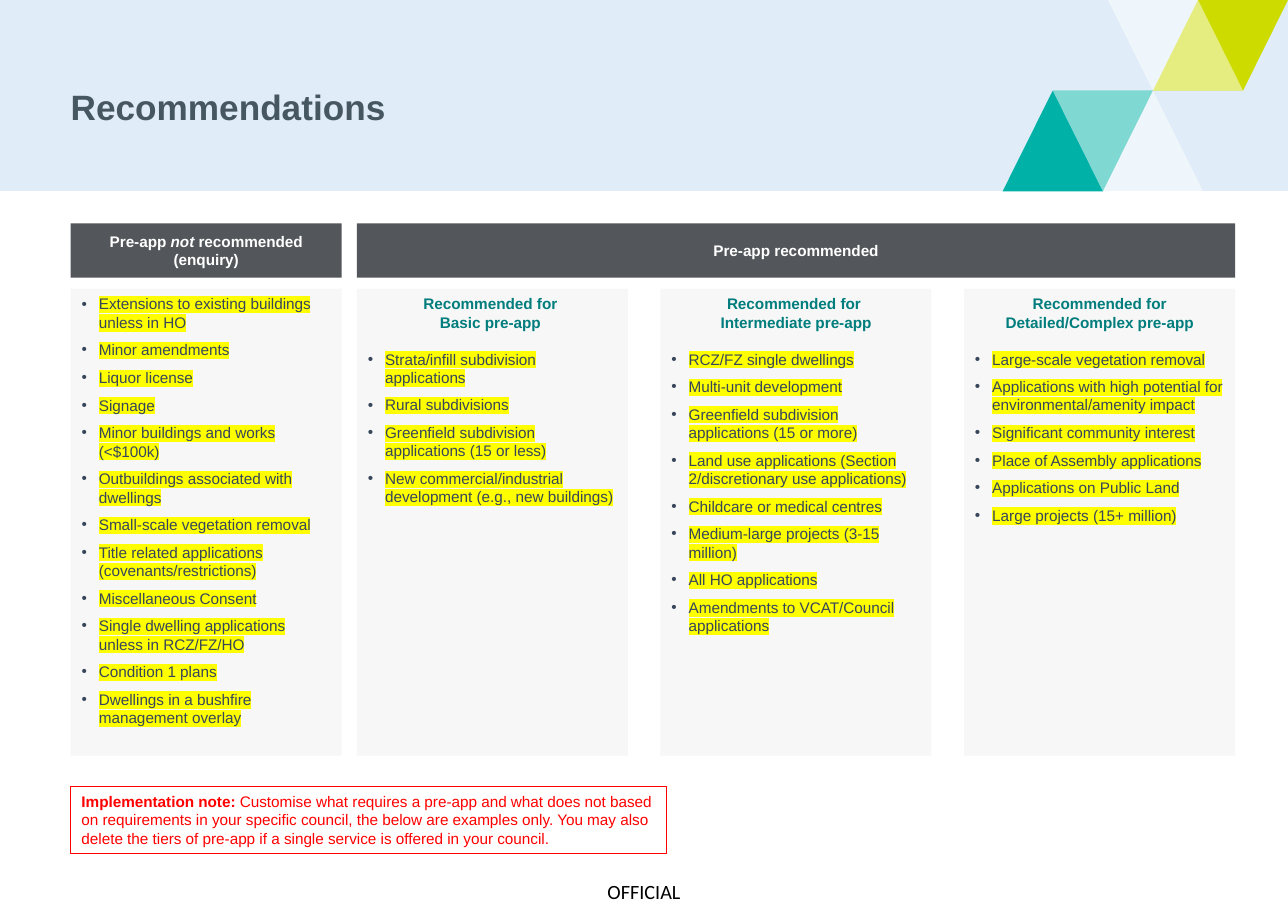
from lxml.etree import SubElement
from pptx import Presentation
from pptx.dml.color import RGBColor
from pptx.enum.shapes import MSO_SHAPE
from pptx.enum.text import MSO_ANCHOR, MSO_AUTO_SIZE, PP_ALIGN
from pptx.oxml.ns import qn
from pptx.util import Cm, Pt

COLOURS = {
    "band": "E0EDF8", "teal": "00B1A8", "lime": "CDDB00", "white": "FFFFFF",
    "title": "465762", "header": "53565A", "panel": "F2F2F2", "tier": "017D7D",
    "body": "37465B", "highlight": "FFFF00", "note": "FF0000", "black": "000000",
}

LEFT, COLUMN_WIDTH, PITCH = 1.63, 6.25, 7.0
TIERS_LEFT = 8.23
HEADER_TOP, HEADER_HEIGHT = 5.15, 1.25
PANEL_TOP, PANEL_HEIGHT = 6.66, 10.76
BAND_HEIGHT, BAND_MIDDLE = 4.41, 2.09

# Tier heading (None for the enquiry column) and its bullets
COLUMNS = [
    (None, [
        "Extensions to existing buildings unless in HO", "Minor amendments",
        "Liquor license", "Signage", "Minor buildings and works (<$100k)",
        "Outbuildings associated with dwellings", "Small-scale vegetation removal",
        "Title related applications (covenants/restrictions)",
        "Miscellaneous Consent", "Single dwelling applications unless in RCZ/FZ/HO",
        "Condition 1 plans", "Dwellings in a bushfire management overlay"]),
    ("Recommended for \nBasic pre-app ", [
        "Strata/infill subdivision applications", "Rural subdivisions",
        "Greenfield subdivision applications (15 or less)",
        "New commercial/industrial development (e.g., new buildings)"]),
    ("Recommended for \nIntermediate pre-app", [
        "RCZ/FZ single dwellings", "Multi-unit development",
        "Greenfield subdivision applications (15 or more)",
        "Land use applications (Section 2/discretionary use applications)",
        "Childcare or medical centres", "Medium-large projects (3-15 million)",
        "All HO applications", "Amendments to VCAT/Council applications"]),
    ("Recommended for Detailed/Complex pre-app", [
        "Large-scale vegetation removal",
        "Applications with high potential for environmental/amenity impact",
        "Significant community interest", "Place of Assembly applications",
        "Applications on Public Land", "Large projects (15+ million)"]),
]


def colour(name):
    return RGBColor.from_string(COLOURS[name])


def paint(shape, name, opacity=100):
    shape.shadow.inherit = False
    shape.line.fill.background()
    shape.fill.solid()
    shape.fill.fore_color.rgb = colour(name)
    if opacity < 100:
        tint = shape.element.xpath("./p:spPr/a:solidFill/a:srgbClr")[0]
        SubElement(tint, qn("a:alpha"), val=str(opacity * 1000))


def place(shape, left, top, width, height):
    shape.left, shape.top = Cm(left), Cm(top)
    shape.width, shape.height = Cm(width), Cm(height)


def set_font(para, size, name, bold=False, face="Arial"):
    font = para.font
    font.size, font.name, font.bold = Pt(size), face, bold
    font.color.rgb = colour(name)


def set_frame(frame, anchor, side=0.25, edge=0.13):
    frame.word_wrap = True
    frame.auto_size = MSO_AUTO_SIZE.NONE
    frame.vertical_anchor = anchor
    frame.margin_left = frame.margin_right = Cm(side)
    frame.margin_top = frame.margin_bottom = Cm(edge)


def add_polygon(page, points, name, opacity=100):
    corners = [(Cm(x), Cm(y)) for x, y in points]
    builder = page.shapes.build_freeform(*corners[0], scale=1.0)
    builder.add_line_segments(corners[1:], close=True)
    paint(builder.convert_to_shape(), name, opacity)


def add_slants(page, left, step, flat, tip, name):
    """A coloured parallelogram, half covered by a pale one leaning the other way."""
    x = [left + step * i for i in range(5)]
    if tip < flat:
        solid = [(x[1], tip), (x[0], flat), (x[2], flat), (x[3], tip)]
        pale = [(x[1], tip), (x[2], flat), (x[4], flat), (x[3], tip)]
    else:
        solid = [(x[3], tip), (x[4], flat), (x[2], flat), (x[1], tip)]
        pale = [(x[3], tip), (x[2], flat), (x[0], flat), (x[1], tip)]
    add_polygon(page, solid, name)
    add_polygon(page, pale, "white", 50)


def add_banner(page, width, height):
    add_polygon(page, [(0, 0), (width, 0), (width, height), (0, height)], "band")
    add_slants(page, 23.12, 1.155, height, BAND_MIDDLE, "teal")
    add_slants(page, 25.55, 1.0375, 0, BAND_MIDDLE, "lime")
    # Title, brought in front of the band
    title = page.shapes.title
    title.element.getparent().append(title.element)
    place(title, LEFT, 1.83, 18.97, 1.25)
    set_frame(title.text_frame, MSO_ANCHOR.TOP, side=0)
    para = title.text_frame.paragraphs[0]
    para.text = "Recommendations"
    para.alignment = PP_ALIGN.LEFT
    set_font(para, 23, "title", True)


def add_header(page, left, width, spans, side=0.25):
    header = page.shapes.add_shape(MSO_SHAPE.RECTANGLE, 0, 0, 0, 0)
    place(header, left, HEADER_TOP, width, HEADER_HEIGHT)
    paint(header, "header")
    set_frame(header.text_frame, MSO_ANCHOR.MIDDLE, side)
    para = header.text_frame.paragraphs[0]
    para.alignment = PP_ALIGN.CENTER
    for text, italic in spans:
        span = para.add_run()
        span.text = text
        span.font.italic = italic
    set_font(para, 10, "white", True)


def fill_column(panel, left, heading, items):
    place(panel, left, PANEL_TOP, COLUMN_WIDTH, PANEL_HEIGHT)
    paint(panel, "panel", 60)
    frame = panel.text_frame
    set_frame(frame, MSO_ANCHOR.TOP)
    lines = ([heading] if heading else []) + items
    for index, text in enumerate(lines):
        para = frame.paragraphs[0] if index == 0 else frame.add_paragraph()
        para.text = text
        is_heading = text == heading
        properties = para._p.get_or_add_pPr()
        indent = 0 if is_heading else Cm(0.4)
        properties.set("marL", str(indent))
        properties.set("indent", str(-indent))
        if is_heading:
            SubElement(properties, qn("a:buNone"))
        else:
            SubElement(properties, qn("a:buChar"), char="•")
            marker = SubElement(para.runs[0].font._element, qn("a:highlight"))
            SubElement(marker, qn("a:srgbClr"), val=COLOURS["highlight"])
        para.alignment = PP_ALIGN.CENTER if is_heading else PP_ALIGN.LEFT
        para.space_before = Pt(0)
        para.space_after = Pt(12 if is_heading else 6)
        set_font(para, 10, "tier" if is_heading else "body", is_heading)


def add_note(page, left, top, width, height):
    note = page.shapes.add_shape(MSO_SHAPE.RECTANGLE, 0, 0, 0, 0)
    place(note, left, top, width, height)
    note.shadow.inherit = False
    note.fill.background()
    note.line.color.rgb = colour("note")
    note.line.width = Pt(0.75)
    set_frame(note.text_frame, MSO_ANCHOR.TOP)
    para = note.text_frame.paragraphs[0]
    para.alignment = PP_ALIGN.LEFT
    lead = para.add_run()
    lead.text = "Implementation note: "
    lead.font.bold = True
    para.add_run().text = (
        "Customise what requires a pre-app and what does not based on requirements "
        "in your specific council, the below are examples only. You may also delete "
        "the tiers of pre-app if a single service is offered in your council.")
    set_font(para, 10, "note")


def add_marking(page, left, top, width, height):
    box = page.shapes.add_textbox(0, 0, 0, 0)
    place(box, left, top, width, height)
    set_frame(box.text_frame, MSO_ANCHOR.MIDDLE, 0, 0)
    para = box.text_frame.paragraphs[0]
    para.text = "OFFICIAL"
    para.alignment = PP_ALIGN.CENTER
    set_font(para, 13.2, "black", face="Calibri")


def main():
    deck = Presentation()
    deck.slide_width, deck.slide_height = Cm(29.7), Cm(21)
    page = deck.slides.add_slide(deck.slide_layouts.get_by_name("Comparison"))
    add_banner(page, 29.7, BAND_HEIGHT)

    # Column headers
    add_header(page, LEFT, COLUMN_WIDTH,
               [("Pre-app ", False), ("not ", True), ("recommended (enquiry)", False)], 0.1)
    add_header(page, TIERS_LEFT, 2 * PITCH + COLUMN_WIDTH, [("Pre-app recommended", False)])

    # Lists
    panels = [holder for holder in page.placeholders if holder.placeholder_format.idx > 0]
    lefts = [LEFT] + [TIERS_LEFT + PITCH * i for i in range(3)]
    for panel, left, (heading, items) in zip(panels, lefts, COLUMNS):
        fill_column(panel, left, heading, items)

    # Foot of the page
    add_note(page, LEFT, 18.13, 13.75, 1.55)
    add_marking(page, 13.45, 20.28, 2.8, 0.56)
    deck.save("out.pptx")


if __name__ == "__main__":
    main()
